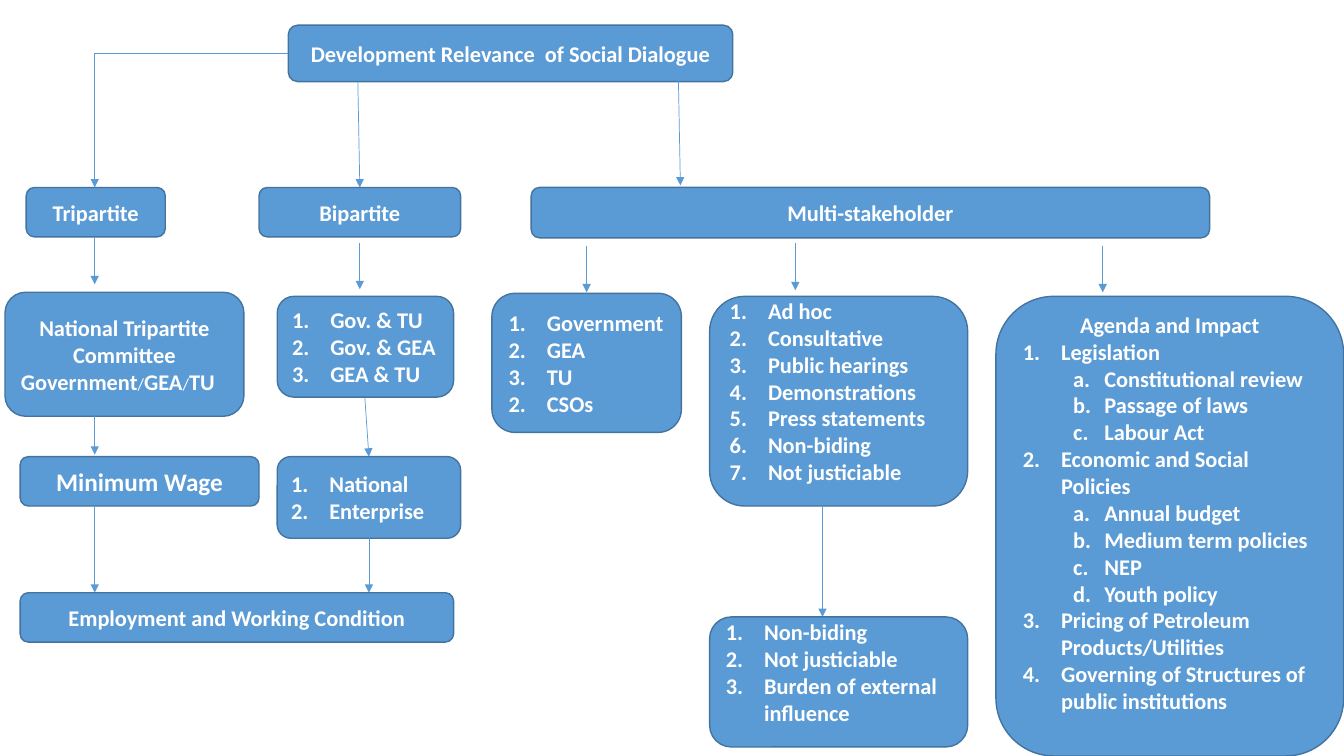
import pptx
import pptx.util
import pptx.dml.color
import pptx.enum.shapes
import pptx.enum.text
import pptx.oxml.ns
import lxml.etree

CELL = 0.1
COLS, ROWS = 133.33, 75
FILL, EDGE, WHITE = "5B9BD5", "43739E", "FFFFFF"
TAG = 4.9
LEVELS = {"1": (0, 0.38, 0.38, "arabicPeriod"),
          "a": (1, 0.81, 0.31, "alphaLcPeriod")}


def grid(n):
    return pptx.util.Inches(n * CELL)


def paint(form, tone):
    form.rgb = pptx.dml.color.RGBColor.from_string(tone)


def node(base, tag, **attrs):
    return lxml.etree.SubElement(base, pptx.oxml.ns.qn(tag), **attrs)


def write(para, text, size=16, bold=True):
    run = para.add_run()
    run.text = text
    run.font.name = "Calibri"
    run.font.size = pptx.util.Pt(size)
    run.font.bold = bold
    paint(run.font.color, WHITE)


def mark(para, kind, start=None):
    level, left, hang, style = LEVELS[kind]
    para.level = level
    props = para._p.get_or_add_pPr()
    props.set("marL", str(pptx.util.Inches(left)))
    props.set("indent", str(-pptx.util.Inches(hang)))
    node(props, "a:buFont", typeface="+mj-lt")
    auto = node(props, "a:buAutoNum", type=style)
    if start:
        auto.set("startAt", str(start))


def panel(slide, x, y, w, h, foot=0):
    kind = pptx.enum.shapes.MSO_SHAPE.FLOWCHART_ALTERNATE_PROCESS
    shape = slide.shapes.add_shape(kind, grid(x), grid(y), grid(w), grid(h))
    shape.shadow.inherit = False
    shape.fill.solid()
    paint(shape.fill.fore_color, FILL)
    paint(shape.line.color, EDGE)
    shape.line.width = pptx.util.Pt(1)
    frame = shape.text_frame
    frame.word_wrap = True
    frame.vertical_anchor = pptx.enum.text.MSO_ANCHOR.MIDDLE
    frame.margin_bottom = pptx.util.Inches(0.05 + foot)
    frame.paragraphs[0].alignment = pptx.enum.text.PP_ALIGN.LEFT
    return frame


def label(slide, x, y, w, h, text, size=16):
    frame = panel(slide, x, y, w, h)
    frame.paragraphs[0].alignment = pptx.enum.text.PP_ALIGN.CENTER
    write(frame.paragraphs[0], text, size)
    return frame


def listing(slide, x, y, w, h, items, title=None, foot=0):
    frame = panel(slide, x, y, w, h, foot)
    para = frame.paragraphs[0]
    if title:
        para.alignment = pptx.enum.text.PP_ALIGN.CENTER
        write(para, title)
        para = None
    for kind, text, *start in items:
        para = para or frame.add_paragraph()
        para.alignment = pptx.enum.text.PP_ALIGN.LEFT
        mark(para, kind, *start)
        write(para, text)
        para = None


def arrow(slide, x, y, to_x, to_y, bent=False):
    kinds = pptx.enum.shapes.MSO_CONNECTOR
    kind = kinds.ELBOW if bent else kinds.STRAIGHT
    link = slide.shapes.add_connector(kind, grid(x), grid(y), grid(to_x), grid(to_y))
    paint(link.line.color, FILL)
    link.line.width = pptx.util.Pt(0.5)
    node(link.line._get_or_add_ln(), "a:tailEnd", type="triangle")
    props = link._element.spPr
    node(props, "a:effectLst")
    if bent:
        props.find(pptx.oxml.ns.qn("a:prstGeom")).set("prst", "bentConnector2")


def plain(*texts):
    return [("1", text) for text in texts]


def head(slide, x, y, w, h):
    label(slide, x, y, w, h, "Development Relevance  of Social Dialogue")
    arrow(slide, x, y + h / 2, x - 19.2, y + 16.1, True)
    arrow(slide, x + 6.9, y + h, x + 7.1, y + 16.1)
    arrow(slide, x + 38.7, y + 5.3, x + 38.9, y + 15.9)


def three(slide, x, y, w):
    mid = x + 8.9
    label(slide, x + 2.1, y, 13.8, TAG, "Tripartite")
    arrow(slide, mid, y + 5, mid, y + 9.6)
    frame = label(slide, x, y + 10.4, w, 12.3, "National Tripartite Committee")
    para = frame.add_paragraph()
    para.alignment = pptx.enum.text.PP_ALIGN.LEFT
    for text in ("Government", "/", "GEA", "/", "TU"):
        slash = text == "/"
        write(para, text, 12 if slash else 16, not slash)
    arrow(slide, mid, y + 22.7, mid, y + 26.5)
    label(slide, x + 1.5, y + 26.7, w, TAG, "Minimum Wage", 18)
    arrow(slide, mid, y + 31.7, mid, y + 40.2)


def two(slide, x, y, w):
    label(slide, x, y, w, TAG, "Bipartite")
    arrow(slide, x + w / 2, y + 5.5, x + w / 2, y + 10.1)
    listing(slide, x + 1.8, y + 10.8, 17.5, 10,
            plain("Gov. & TU", "Gov. & GEA", "GEA & TU"))
    arrow(slide, x + 10.5, y + 20.9, x + 10.9, y + 26.7)
    listing(slide, x + 1.8, y + 26.7, w - 1.8, 8.1, plain("National", "Enterprise"))
    arrow(slide, x + 10.9, y + 34.8, x + 10.9, y + 40.2)


def many(slide, x, y, w):
    label(slide, x, y, w, 5, "Multi-stakeholder")
    for step, top, end in ((5.5, 5.8, 10.4), (26.2, 5.5, 10.2), (56.7, 5.8, 10.4)):
        arrow(slide, x + step, y + top, x + step, y + end)
    listing(slide, x - 3.9, y + 10.5, 18.8, 13.8,
            plain("Government", "GEA", "TU") + [("1", "CSOs", 2)])
    listing(slide, x + 17.7, y + 10.8, 25.6, 20.8,
            plain("Ad hoc", "Consultative", "Public hearings", "Demonstrations",
                  "Press statements", "Non-biding", "Not justiciable"), foot=0.2)
    arrow(slide, x + 28.9, y + 31.7, x + 28.9, y + 42.6)
    listing(slide, x + 17.7, y + 42.6, 25.6, 12.9,
            plain("Non-biding", "Not justiciable", "Burden of external influence"),
            foot=0.2)
    agenda(slide, x + 46.1, y + 10.8, 34.5, 45.6)


def agenda(slide, x, y, w, h):
    listing(slide, x, y, w, h, [
        ("1", "Legislation"),
        ("a", "Constitutional review"),
        ("a", "Passage of laws"),
        ("a", "Labour Act"),
        ("1", "Economic and Social Policies"),
        ("a", "Annual budget"),
        ("a", "Medium term policies"),
        ("a", "NEP"),
        ("a", "Youth policy"),
        ("1", "Pricing of Petroleum Products/Utilities", 3),
        ("1", "Governing of Structures of public institutions", 3),
    ], "Agenda and Impact", 0.27)


def main():
    deck = pptx.Presentation()
    deck.slide_width, deck.slide_height = grid(COLS), grid(ROWS)
    slide = deck.slides.add_slide(deck.slide_layouts[6])
    head(slide, 28.6, 2.5, 44.1, 5.6)
    three(slide, 0.5, 18.6, 23.7)
    two(slide, 25.7, 18.6, 20)
    label(slide, 2, 58.8, 43, TAG, "Employment and Working Condition")
    many(slide, 52.7, 18.6, 67.3)
    deck.save("out.pptx")


if __name__ == "__main__":
    main()
